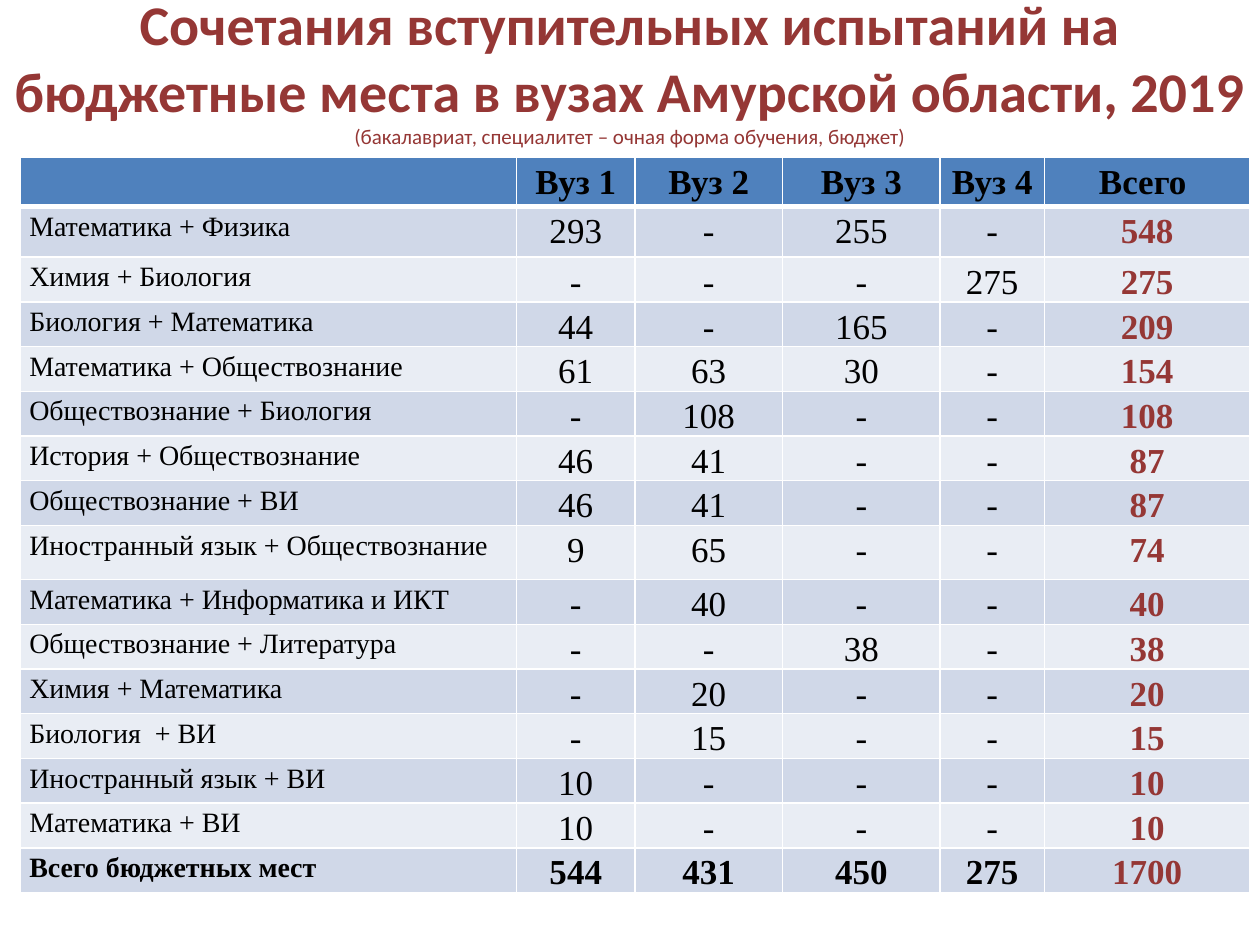
import pptx
import pptx.util
import pptx.dml.color
import pptx.enum.text
import pptx.oxml
import pptx.oxml.ns

Pt = pptx.util.Pt
ALIGN = pptx.enum.text.PP_ALIGN

COLORS = {
    "accent": "953735",
    "text": "000000",
    "header": "4F81BD",
    "odd_row": "D0D8E8",
    "even_row": "E9EDF4",
    "border": "FFFFFF",
}

HEADINGS = ["", "Вуз 1", "Вуз 2", "Вуз 3", "Вуз 4", "Всего "]
COMBINATIONS = [
    ("Математика + Физика", "293", "-", "255", "-", "548"),
    ("Химия + Биология", "-", "-", "-", "275", "275"),
    ("Биология + Математика", "44", "-", "165", "-", "209"),
    ("Математика + Обществознание", "61", "63", "30", "-", "154"),
    ("Обществознание + Биология", "-", "108", "-", "-", "108"),
    ("История + Обществознание", "46", "41", "-", "-", "87"),
    ("Обществознание + ВИ", "46", "41", "-", "-", "87"),
    ("Иностранный язык + Обществознание", "9", "65", "-", "-", "74"),
    ("Математика + Информатика и ИКТ", "-", "40", "-", "-", "40"),
    ("Обществознание + Литература", "-", "-", "38", "-", "38"),
    ("Химия + Математика", "-", "20", "-", "-", "20"),
    ("Биология  + ВИ", "-", "15", "-", "-", "15"),
    ("Иностранный язык + ВИ", "10", "-", "-", "-", "10"),
    ("Математика + ВИ", "10", "-", "-", "-", "10"),
]
TOTALS = ("Всего бюджетных мест", "544", "431", "450", "275", "1700")

COLUMN_WIDTHS = [283.5, 67.5, 84.5, 90, 59.5, 117.5]
ROW_HEIGHT = 25.5
TALL_ROWS = {0: 28, 1: 29, 8: 31}
CELL_FORMAT = {
    "margin_left": Pt(5),
    "margin_right": Pt(5),
    "margin_top": 0,
    "margin_bottom": 0,
}


def set_attributes(target, values):
    for name, value in values.items():
        setattr(target, name, value)


def color(name):
    return pptx.dml.color.RGBColor.from_string(COLORS[name])


def add_run(paragraph, text, color_name, **font_format):
    run = paragraph.add_run()
    run.text = text
    set_attributes(run.font, font_format)
    run.font.color.rgb = color(color_name)


def set_borders(cell, top=1, bottom=1):
    properties = cell._tc.get_or_add_tcPr()
    widths = {"lnL": 1, "lnR": 1, "lnT": top, "lnB": bottom}
    for position, (side, width) in enumerate(widths.items()):
        border = pptx.oxml.parse_xml(
            f'<a:{side} {pptx.oxml.ns.nsdecls("a")} w="{Pt(width)}"><a:solidFill>'
            f'<a:srgbClr val="{COLORS["border"]}"/></a:solidFill></a:{side}>')
        properties.insert(position, border)


def place_title(slide, left, top, width, height):
    title = slide.shapes.title
    set_attributes(title, {"left": Pt(left), "top": Pt(top),
                           "width": Pt(width), "height": Pt(height)})
    set_attributes(title.text_frame, {
        "word_wrap": True,
        "auto_size": pptx.enum.text.MSO_AUTO_SIZE.NONE,
        "vertical_anchor": pptx.enum.text.MSO_ANCHOR.MIDDLE,
    })
    heading = title.text_frame.paragraphs[0]
    heading.alignment = ALIGN.CENTER
    add_run(heading, "Сочетания вступительных испытаний на бюджетные места "
            "в вузах Амурской области, 2019", "accent",
            name="Calibri", size=Pt(32), bold=True)
    heading.add_line_break()
    add_run(heading, "(бакалавриат, специалитет – очная форма обучения, бюджет)",
            "accent", name="Calibri", size=Pt(12), bold=False)


def fill_cell(cell, text, row, column, last_row):
    is_label = column == 0
    is_sum = column == len(HEADINGS) - 1 and row > 0
    is_total = row == last_row
    set_attributes(cell, CELL_FORMAT)
    cell.fill.solid()
    cell.fill.fore_color.rgb = color(
        "header" if row == 0 else "odd_row" if row % 2 else "even_row")
    set_borders(cell, top=3 if row == 1 else 1, bottom=3 if row == 0 else 1)

    if not text:
        return
    paragraph = cell.text_frame.paragraphs[0]
    label_alignment = ALIGN.JUSTIFY if is_total else ALIGN.LEFT
    set_attributes(paragraph, {
        "alignment": label_alignment if is_label else ALIGN.CENTER,
        "line_spacing": 1.15,
    })
    add_run(paragraph, text, "accent" if is_sum else "text",
            name="Times New Roman", size=Pt(16 if is_label else 20),
            bold=row == 0 or is_sum or is_total)


def place_places_table(slide, left, top):
    rows = [HEADINGS, *COMBINATIONS, TOTALS]
    heights = [TALL_ROWS.get(row, ROW_HEIGHT) for row in range(len(rows))]
    places = slide.shapes.add_table(
        len(rows), len(HEADINGS), Pt(left), Pt(top),
        Pt(sum(COLUMN_WIDTHS)), Pt(sum(heights))).table
    for column, width in zip(places.columns, COLUMN_WIDTHS):
        column.width = Pt(width)
    for row, (values, height) in enumerate(zip(rows, heights)):
        places.rows[row].height = Pt(height)
        for column, text in enumerate(values):
            fill_cell(places.cell(row, column), text, row, column, len(rows) - 1)


def main():
    presentation = pptx.Presentation()
    set_attributes(presentation, {"slide_width": Pt(720), "slide_height": Pt(540)})
    slide = presentation.slides.add_slide(presentation.slide_layouts[5])

    # Title with the study form below it
    place_title(slide, 0, -11.5, 720, 102)
    # Budget places by exam combination and university
    place_places_table(slide, 11.75, 90)

    presentation.save("out.pptx")


if __name__ == "__main__":
    main()
